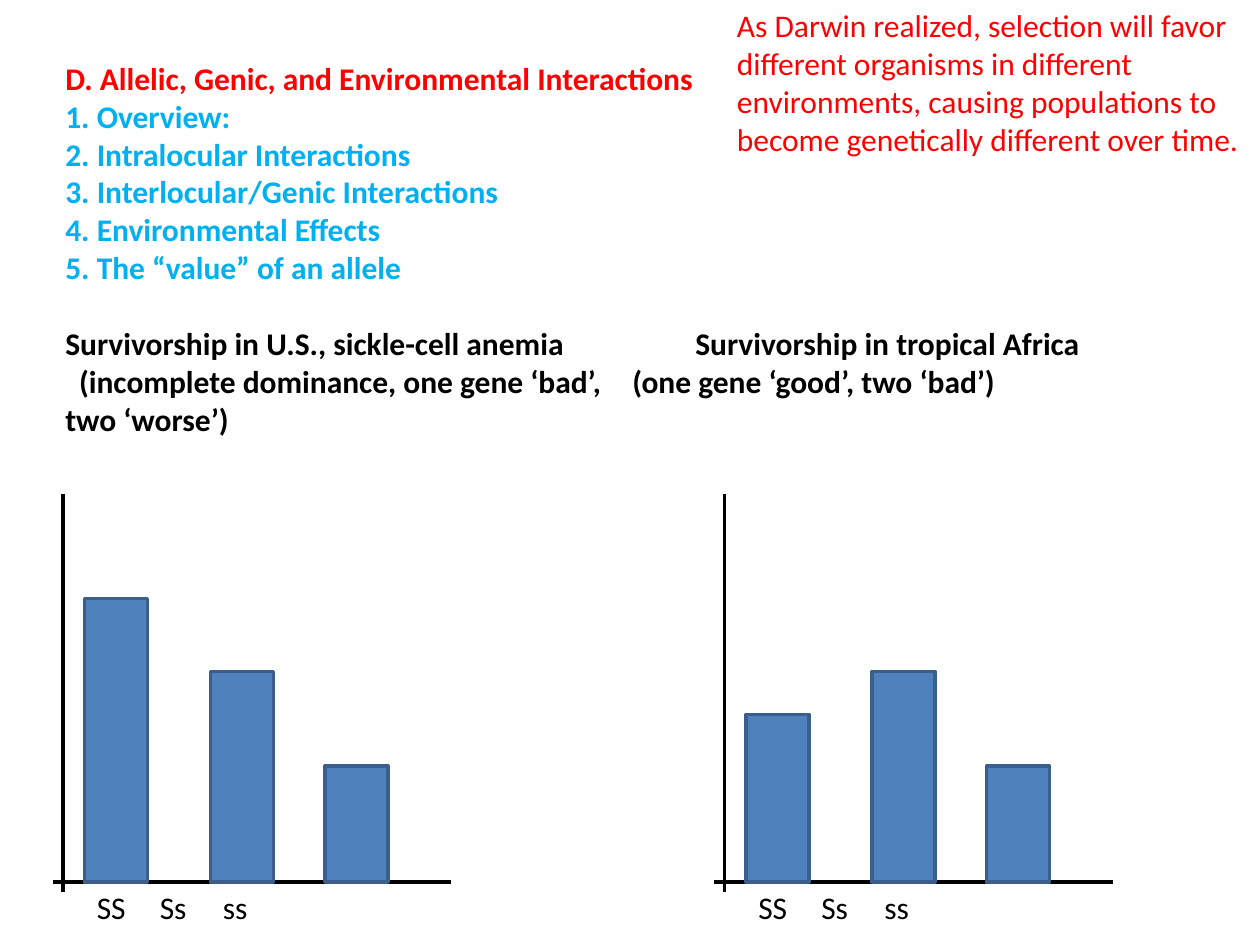
from dataclasses import dataclass

import pptx
import pptx.dml.color
import pptx.enum.shapes
import pptx.oxml.ns
import pptx.util
from lxml import etree

Inches = pptx.util.Inches
Pt = pptx.util.Pt
qn = pptx.oxml.ns.qn


@dataclass(frozen=True)
class Theme:
    font: str = "Calibri"
    text_size: int = 18
    red: str = "FF0000"
    cyan: str = "00B0F0"
    black: str = "000000"
    bar_fill: str = "4F81BD"
    bar_line: str = "3A5F8C"
    axis_width: float = 2.25
    bar_line_width: float = 2


THEME = Theme()
BASELINE = 7.0
BAR_WIDTH = 0.5
BAR_OFFSETS = (0.25, 1.25, 2.16)  # from the left end of the horizontal axis

OUTLINE = (
    ("D. Allelic, Genic, and Environmental Interactions", THEME.red),
    ("1. Overview:", THEME.cyan),
    ("2. Intralocular Interactions", THEME.cyan),
    ("3. Interlocular/Genic Interactions", THEME.cyan),
    ("4. Environmental Effects", THEME.cyan),
    ("5. The “value” of an allele", THEME.cyan),
)
CHART_HEADINGS = (
    "Survivorship in U.S., sickle-cell anemia\tSurvivorship in tropical Africa",
    "(incomplete dominance, one gene ‘bad’,\t(one gene ‘good’, two ‘bad’)",
    "two ‘worse’)",
)


def rgb(color):
    return pptx.dml.color.RGBColor.from_string(color)


def add_text(shapes, left, top, width, height, lines, bold=False):
    """Add a text box with one paragraph per (text, color) pair."""
    box = shapes.add_textbox(Inches(left), Inches(top), Inches(width), Inches(height))
    frame = box.text_frame
    frame.word_wrap = True
    frame.text = "\n".join(text for text, _ in lines)
    for paragraph, (_, color) in zip(frame.paragraphs, lines):
        for run in paragraph.runs:
            run.font.name = THEME.font
            run.font.size = Pt(THEME.text_size)
            run.font.bold = bold
            run.font.color.rgb = rgb(color)
    return frame.paragraphs


def set_tab_stop(paragraph, position):
    properties = paragraph._p.get_or_add_pPr()
    tabs = etree.SubElement(properties, qn("a:tabLst"))
    etree.SubElement(tabs, qn("a:tab"), pos=str(Inches(position)), algn="l")


def set_first_line_indent(paragraph, indent):
    properties = paragraph._p.get_or_add_pPr()
    properties.set("marL", "0")
    properties.set("indent", str(Inches(indent)))


def add_axis(shapes, x1, y1, x2, y2):
    axis = shapes.add_connector(
        pptx.enum.shapes.MSO_CONNECTOR.STRAIGHT,
        Inches(x1), Inches(y1), Inches(x2), Inches(y2))
    axis.line.color.rgb = rgb(THEME.black)
    axis.line.width = Pt(THEME.axis_width)
    etree.SubElement(axis._element.spPr, qn("a:effectLst"))


def add_bar(shapes, left, height):
    bar = shapes.add_shape(
        pptx.enum.shapes.MSO_SHAPE.RECTANGLE,
        Inches(left), Inches(BASELINE - height), Inches(BAR_WIDTH), Inches(height))
    bar.shadow.inherit = False
    bar.fill.solid()
    bar.fill.fore_color.rgb = rgb(THEME.bar_fill)
    bar.line.color.rgb = rgb(THEME.bar_line)
    bar.line.width = Pt(THEME.bar_line_width)


def add_survivorship_graph(slide, left, heights):
    """Draw grouped axes, genotype labels and bars; left is the axis end."""
    shapes = slide.shapes.add_group_shape().shapes
    add_axis(shapes, left + 0.08, 3.92, left + 0.08, 7.08)
    add_axis(shapes, left, BASELINE, left + 3.16, BASELINE)
    add_text(shapes, left + 0.25, BASELINE, 3.67, 0.4,
             [("SS\tSs\tss", THEME.black)])
    for offset, height in zip(BAR_OFFSETS, heights):
        add_bar(shapes, left + offset, height)


def add_outline(slide):
    headings = [(text, THEME.black) for text in CHART_HEADINGS]
    paragraphs = add_text(slide.shapes, 0.42, 0.42, 9.17, 3.74,
                          [*OUTLINE, *headings], bold=True)
    title_line, detail_line = paragraphs[len(OUTLINE):len(OUTLINE) + 2]
    title_line.space_before = Pt(22)
    set_first_line_indent(detail_line, 0.11)
    for paragraph in (title_line, detail_line):
        set_tab_stop(paragraph, 5)


def main():
    presentation = pptx.Presentation()
    presentation.slide_width = Inches(10)
    presentation.slide_height = Inches(7.5)
    slide = presentation.slides.add_slide(presentation.slide_layouts[6])

    add_outline(slide)
    add_survivorship_graph(slide, 0.42, (2.25, 1.67, 0.92))
    add_survivorship_graph(slide, 5.67, (1.33, 1.67, 0.92))
    add_text(slide.shapes, 5.75, 0, 4.25, 1.31, [(
        "As Darwin realized, selection will favor different organisms in "
        "different environments, causing populations to become genetically "
        "different over time.", THEME.red)])

    presentation.save("out.pptx")


if __name__ == "__main__":
    main()
